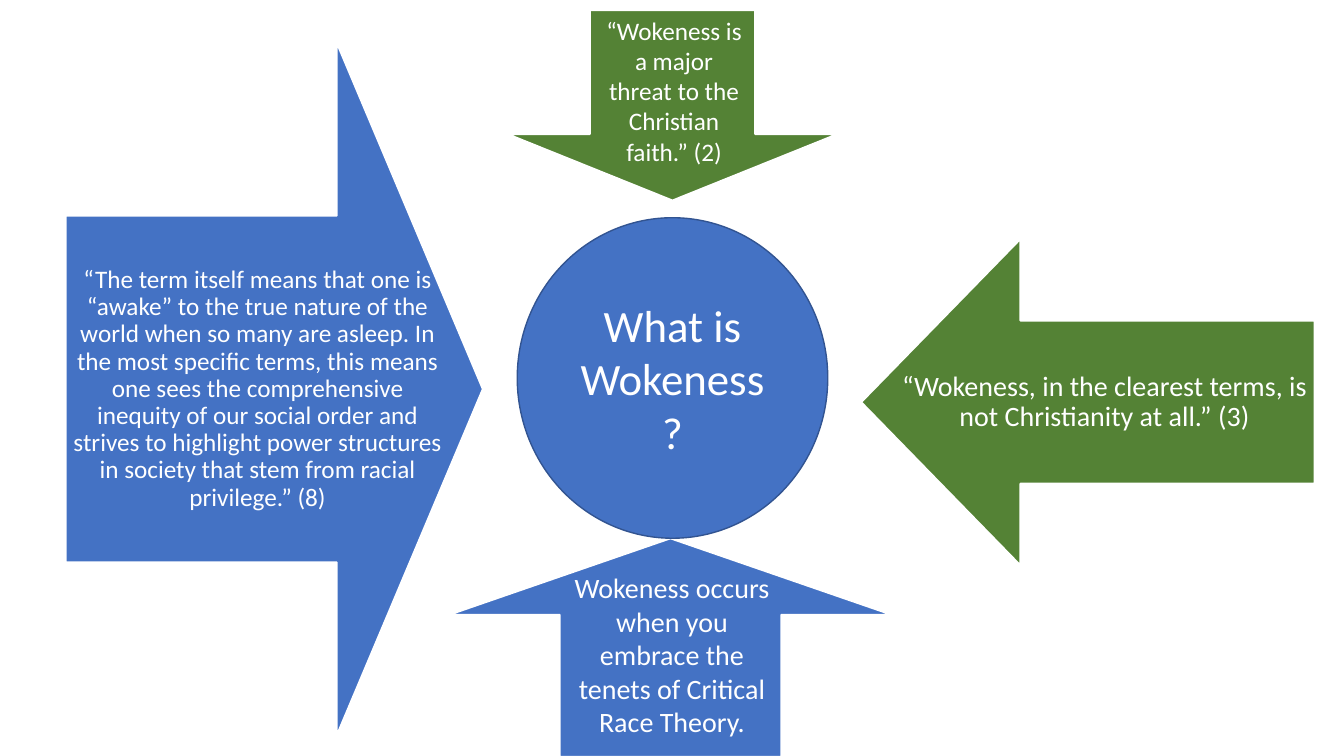
from pptx import Presentation
from pptx.dml.color import RGBColor
from pptx.enum import shapes, text
from pptx.util import Inches, Pt

BLUE = RGBColor(0x44, 0x72, 0xC4)
DARK_BLUE = RGBColor(0x32, 0x54, 0x91)
GREEN = RGBColor(0x54, 0x82, 0x35)
WHITE = RGBColor(0xFF, 0xFF, 0xFF)

TERM_QUOTE = (
    "“The term itself means that one is “awake” to the true nature of the world "
    "when so many are asleep. In the most specific terms, this means one sees the "
    "comprehensive inequity of our social order and strives to highlight power "
    "structures in society that stem from racial privilege.” (8)"
)
FAITH_QUOTE = "“Wokeness, in the clearest terms, is not Christianity at all.” (3)"
THREAT_QUOTE = "“Wokeness is a major threat to the Christian faith.” (2)"
THEORY_NOTE = "Wokeness occurs when you embrace the tenets of Critical Race Theory."


def write(shape, words, size, line_spacing=1.0):
    frame = shape.text_frame
    frame.word_wrap = True
    paragraph = frame.paragraphs[0]
    paragraph.text = words
    paragraph.alignment = text.PP_ALIGN.CENTER
    paragraph.line_spacing = line_spacing
    for name, value in {"name": "Calibri", "size": Pt(size)}.items():
        setattr(paragraph.font, name, value)
    paragraph.font.color.rgb = WHITE


def paint(shape, fill, line, width):
    shape.shadow.inherit = False
    shape.fill.solid()
    shape.fill.fore_color.rgb = fill
    shape.line.color.rgb = line
    shape.line.width = Pt(width)


def add_arrow(slide, tip, direction, length, head, half_width, fill):
    """Draw an arrow back from its tip; the shaft is half as wide as the head."""
    (tip_x, tip_y), (dx, dy) = tip, direction
    half_shaft = half_width / 2
    outline = [(0, 0), (head, half_width), (head, half_shaft), (length, half_shaft),
               (length, -half_shaft), (head, -half_shaft), (head, -half_width)]
    points = [(Inches(tip_x - back * dx - side * dy), Inches(tip_y - back * dy + side * dx))
              for back, side in outline]
    builder = slide.shapes.build_freeform(*points[0])
    builder.add_line_segments(points[1:], close=True)
    arrow = builder.convert_to_shape()
    paint(arrow, fill, WHITE, 1.5)
    return arrow


def write_in_arrow(arrow, words, size, left, right):
    frame = arrow.text_frame
    margins = {"left": left, "right": right, "top": 0.52, "bottom": 0.52}
    for side, inset in margins.items():
        setattr(frame, f"margin_{side}", Inches(inset))
    frame.vertical_anchor = text.MSO_ANCHOR.MIDDLE
    write(arrow, words, size, line_spacing=0.9)


def add_question(slide, left, top, width, height, words):
    circle = slide.shapes.add_shape(
        shapes.MSO_SHAPE.OVAL, *map(Inches, (left, top, width, height)))
    paint(circle, BLUE, DARK_BLUE, 1)
    circle.text_frame.vertical_anchor = text.MSO_ANCHOR.MIDDLE
    write(circle, words, 32)


def add_label(slide, left, top, width, height, words, size):
    label = slide.shapes.add_textbox(*map(Inches, (left, top, width, height)))
    write(label, words, size)
    label.text_frame.auto_size = text.MSO_AUTO_SIZE.SHAPE_TO_FIT_TEXT


def main():
    deck = Presentation()
    deck.slide_width, deck.slide_height = Inches(13.33), Inches(7.5)
    slide = deck.slides.add_slide(deck.slide_layouts[6])

    faith_arrow = add_arrow(slide, (8.54, 3.99), (-1, 0), 4.5, 1.58, 1.62, GREEN)
    write_in_arrow(faith_arrow, FAITH_QUOTE, 20, left=0.38, right=0.05)
    add_arrow(slide, (6.67, 1.99), (0, 1), 1.89, 0.66, 1.64, GREEN)
    add_arrow(slide, (6.65, 5.34), (0, -1), 2.17, 0.76, 2.2, BLUE)
    term_arrow = add_arrow(slide, (4.79, 3.86), (1, 0), 4.14, 1.45, 3.44, BLUE)
    write_in_arrow(term_arrow, TERM_QUOTE, 18, left=0.05, right=0.38)

    add_question(slide, 5.13, 2.16, 3.08, 3.18, "What is Wokeness?")
    add_label(slide, 5.55, 5.61, 2.23, 1.78, THEORY_NOTE, 20)
    add_label(slide, 5.89, 0.1, 1.59, 1.62, THREAT_QUOTE, 18)

    deck.save("out.pptx")


if __name__ == "__main__":
    main()
